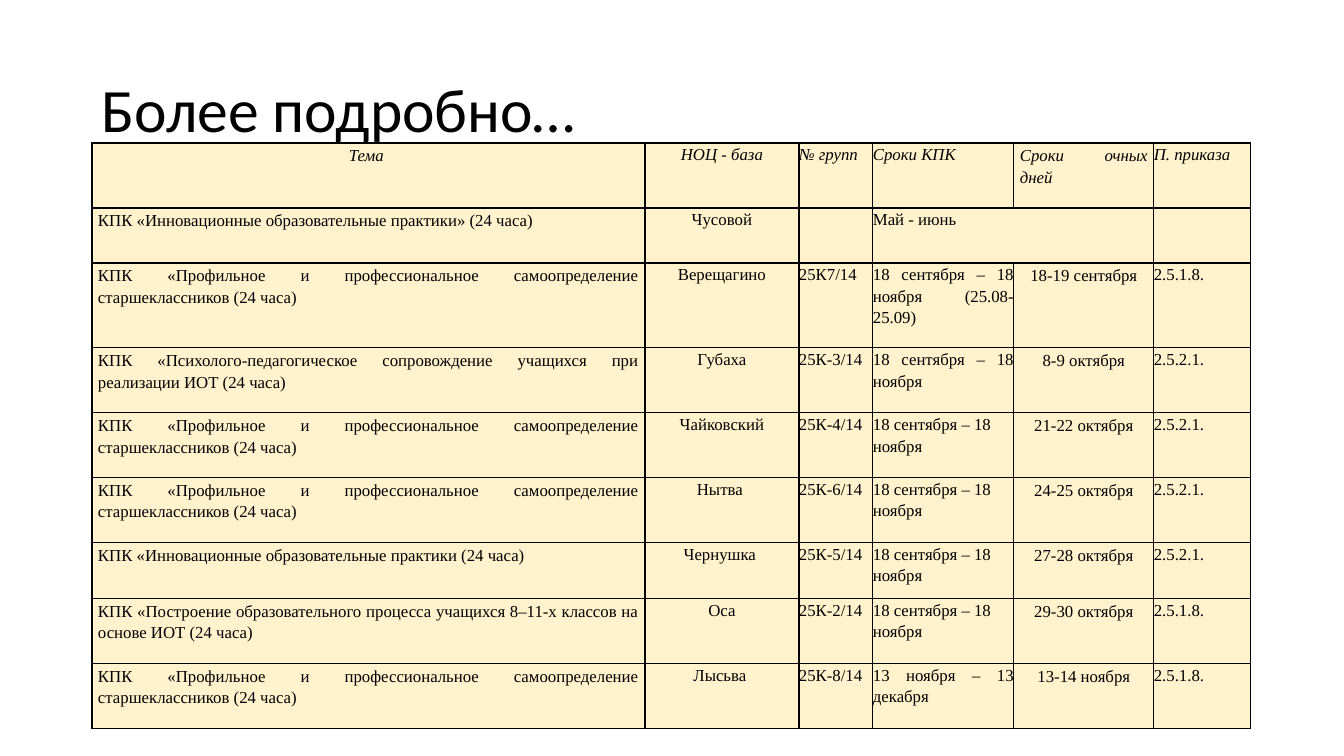
"""Build a slide with a titled timetable of training courses."""
from lxml.etree import SubElement
from pptx import Presentation
from pptx.dml.color import RGBColor
from pptx.enum.text import MSO_ANCHOR, PP_ALIGN
from pptx.oxml.ns import qn
from pptx.util import Pt

TITLE = "Более подробно…"
PROFILE = "КПК «Профильное и профессиональное самоопределение старшеклассников (24 часа)"
AUTUMN = "18 сентября – 18 ноября"
ROWS = [
    ("Тема ", "НОЦ - база", "№ групп", "Сроки КПК", "Сроки очных дней", "П. приказа"),
    ("КПК «Инновационные образовательные практики» (24 часа)", "Чусовой", "",
     "Май - июнь", "", ""),
    (PROFILE, "Верещагино", "25К7/14", AUTUMN + " (25.08-25.09)", "18-19 сентября", "2.5.1.8."),
    ("КПК «Психолого-педагогическое сопровождение учащихся при реализации ИОТ (24 часа)",
     "Губаха", "25К-3/14", AUTUMN, "8-9 октября", "2.5.2.1."),
    (PROFILE, "Чайковский", "25К-4/14", AUTUMN, "21-22 октября", "2.5.2.1."),
    (PROFILE, "Нытва ", "25К-6/14", AUTUMN, "24-25 октября", "2.5.2.1."),
    ("КПК «Инновационные образовательные практики (24 часа)",
     "Чернушка ", "25К-5/14", AUTUMN, "27-28 октября", "2.5.2.1."),
    ("КПК «Построение образовательного процесса учащихся 8–11-х классов на основе ИОТ (24 часа)",
     "Оса", "25К-2/14", AUTUMN, "29-30 октября", "2.5.1.8."),
    (PROFILE, "Лысьва ", "25К-8/14", "13 ноября – 13 декабря", "13-14 ноября", "2.5.1.8."),
]
WIDTHS = [553, 154, 74, 141, 140, 97]
HEIGHTS = [65, 55, 85, 65, 65, 65, 56, 65, 65]
LEFT, TOP = 92, 143
TITLE_BOX = (92, 40, 1159, 146)
PADDED = (0, 4)
LOOSE_ROWS, LOOSE_COLS = range(4, 8), (2, 3)
COLORS = {"ink": "000000", "cell": "FFF2CC"}
SCALE = 914400 / 100.8


def px(n):
    return round(n * SCALE)


def write(para, text, font, size, italic=False):
    run = para.add_run()
    run.text = text
    run.font.name = font
    run.font.size = Pt(size)
    run.font.italic = italic
    run.font.color.rgb = RGBColor.from_string(COLORS["ink"])


def align(row, col):
    if col == 1 or (col == 0 and row == 0) or (col == 4 and row > 0):
        return PP_ALIGN.CENTER
    if row in LOOSE_ROWS and col in LOOSE_COLS:
        return PP_ALIGN.LEFT
    return PP_ALIGN.JUSTIFY


def outline(cell):
    props = cell._tc.get_or_add_tcPr()
    for side in ("a:lnL", "a:lnR", "a:lnT", "a:lnB"):
        line = SubElement(props, qn(side), w=str(Pt(1)))
        fill = SubElement(line, qn("a:solidFill"))
        SubElement(fill, qn("a:srgbClr"), val=COLORS["ink"])


def fill_cell(cell, row, col, text):
    outline(cell)
    cell.fill.solid()
    cell.fill.fore_color.rgb = RGBColor.from_string(COLORS["cell"])
    side, top = (6, 1) if col in PADDED else (0, 0)
    cell.margin_left = cell.margin_right = px(side)
    cell.margin_top, cell.margin_bottom = px(top), 0
    if text:
        para = cell.text_frame.paragraphs[0]
        para.alignment = align(row, col)
        para.line_spacing = 1.15
        if row in LOOSE_ROWS and col in LOOSE_COLS:
            para.space_after = Pt(10)
        write(para, text, "Times New Roman", 12, row == 0)


def add_title(slide):
    frame = slide.shapes.add_textbox(*map(px, TITLE_BOX)).text_frame
    frame.word_wrap = True
    frame.vertical_anchor = MSO_ANCHOR.MIDDLE
    para = frame.paragraphs[0]
    para.line_spacing = 0.9
    write(para, TITLE, "Calibri", 44)


def add_grid(slide):
    box = map(px, (LEFT, TOP, sum(WIDTHS), sum(HEIGHTS)))
    table = slide.shapes.add_table(len(ROWS), len(WIDTHS), *box).table
    for col, width in zip(table.columns, WIDTHS):
        col.width = px(width)
    for row, height in zip(table.rows, HEIGHTS):
        row.height = px(height)
    for r, texts in enumerate(ROWS):
        for c, text in enumerate(texts):
            fill_cell(table.cell(r, c), r, c, text)
    table.cell(1, 3).merge(table.cell(1, 4))


def main():
    deck = Presentation()
    deck.slide_width, deck.slide_height = px(1344), px(756)
    slide = deck.slides.add_slide(deck.slide_layouts[6])
    add_title(slide)
    add_grid(slide)
    deck.save("out.pptx")


if __name__ == "__main__":
    main()
